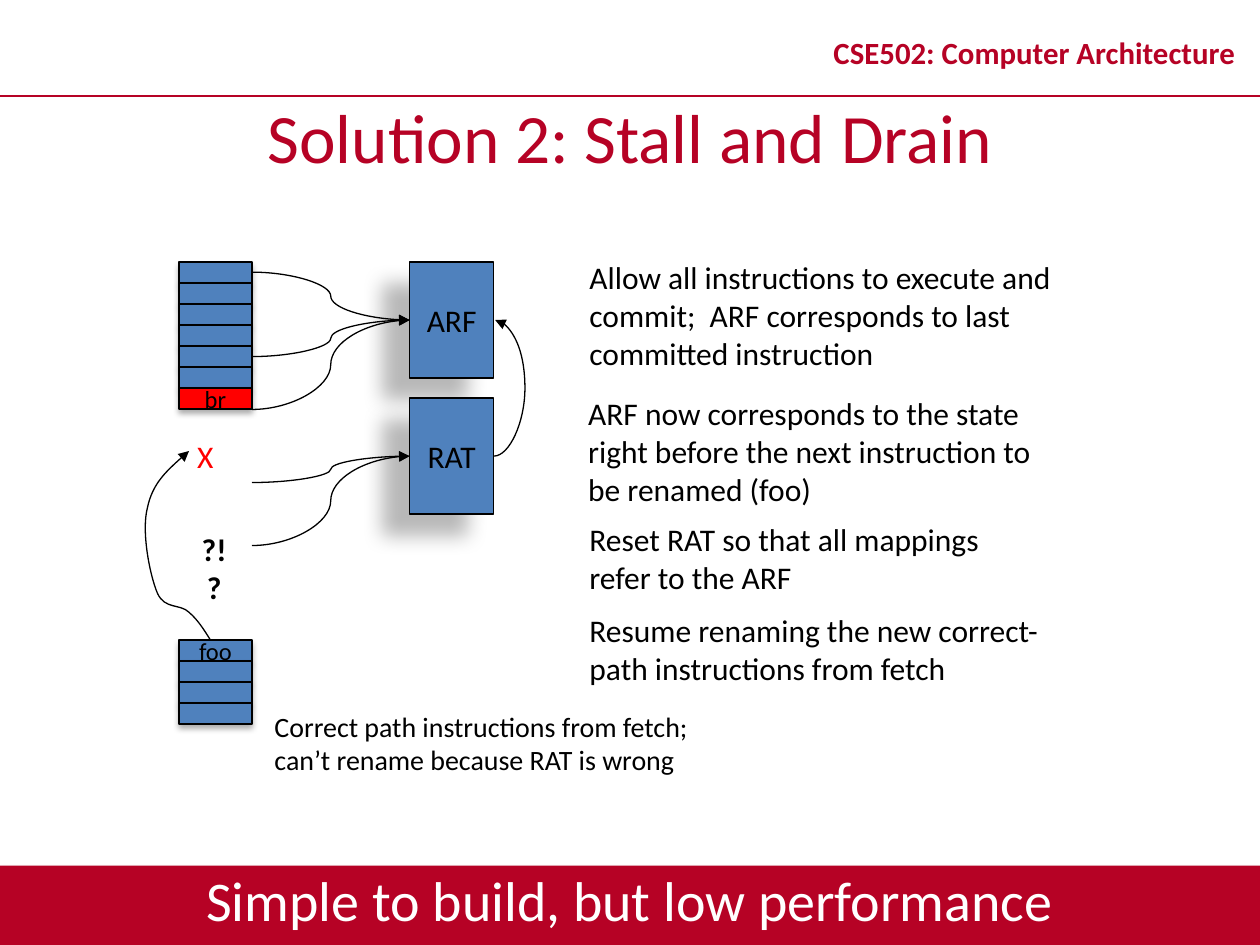
from lxml.etree import SubElement
from pptx import Presentation
from pptx.dml.color import RGBColor
from pptx.enum.shapes import MSO_CONNECTOR, MSO_SHAPE
from pptx.enum.text import MSO_ANCHOR, MSO_AUTO_SIZE, PP_ALIGN
from pptx.oxml.ns import qn
from pptx.util import Inches, Pt

CRIMSON, BLUE, RED, BLACK, WHITE = "B60225", "4F81BD", "FF0000", "000000", "FFFFFF"
BAR_SHADOW = {"alpha": 35, "blur": 3.1, "dist": 1.8, "angle": 90}
ROW_SHADOW = {"alpha": 32, "blur": 3.5, "dist": 2.2, "angle": 90}
BLOCK_SHADOW = {"alpha": 28, "blur": 11.8, "dist": 19.7, "angle": 141}


def color(value):
    return RGBColor.from_string(value)


def set_attributes(target, values):
    for name, value in values.items():
        setattr(target, name, value)


def write(shape, lines, size, ink=BLACK, bold=False, align=PP_ALIGN.LEFT, **frame_format):
    """Put one paragraph per line into the shape."""
    frame = shape.text_frame
    set_attributes(frame, {"word_wrap": False, **frame_format})
    for index, line in enumerate(lines):
        para = frame.add_paragraph() if index else frame.paragraphs[0]
        para.alignment = align
        span = para.add_run()
        span.text = line
        set_attributes(span.font, {"name": "Calibri", "size": Pt(size), "bold": bold})
        span.font.color.rgb = color(ink)


def add_text(page, box, lines, size, **text_format):
    shape = page.shapes.add_textbox(*map(Inches, box))
    write(shape, lines, size, **text_format)
    return shape


def add_box(shapes, box, fill, shadow, label="", size=18, outlined=True):
    shape = shapes.add_shape(MSO_SHAPE.RECTANGLE, *map(Inches, box))
    shape.fill.solid()
    shape.fill.fore_color.rgb = color(fill)
    if outlined:
        set_line(shape, BLACK, 0.75)
    else:
        shape.line.fill.background()
    add_shadow(shape, **shadow)
    if label:
        write(shape, [label], size, align=PP_ALIGN.CENTER, vertical_anchor=MSO_ANCHOR.MIDDLE)


def add_shadow(shape, alpha, blur, dist, angle):
    shape.shadow.inherit = False
    effects = shape._element.spPr.find(qn("a:effectLst"))
    outer = SubElement(effects, qn("a:outerShdw"), blurRad=str(Pt(blur)), dist=str(Pt(dist)),
                       dir=str(angle * 60000), algn="ctr", rotWithShape="0")
    tint = SubElement(outer, qn("a:srgbClr"), val=BLACK)
    SubElement(tint, qn("a:alpha"), val=str(alpha * 1000))


def set_line(shape, ink, width, arrow=False):
    shape.line.color.rgb = color(ink)
    shape.line.width = Pt(width)
    if arrow:
        SubElement(shape.line._get_or_add_ln(), qn("a:tailEnd"), type="triangle")


def add_link(page, start, end, kind=MSO_CONNECTOR.CURVE, ink=BLACK, width=0.75, arrow=True,
             bend=None):
    """Join two points; bend is the bulge of a curve as a share of its width."""
    link = page.shapes.add_connector(kind, *map(Inches, (*start, *end)))
    set_line(link, ink, width, arrow)
    properties = link._element.spPr
    SubElement(properties, qn("a:effectLst"))
    if bend:
        guides = properties.find(qn("a:prstGeom")).get_or_add_avLst()
        SubElement(guides, qn("a:gd"), name="adj1", fmla=f"val {bend * 100000}")


def add_curved_arrow(page, points):
    """Draw Bezier segments: a start, then two controls and an end for each."""
    start, *rest = [tuple(map(Inches, point)) for point in points]
    builder = page.shapes.build_freeform(*start)
    builder.add_line_segments(rest, close=False)
    curve = builder.convert_to_shape()
    curve.fill.background()
    set_line(curve, BLACK, 0.75, arrow=True)
    curve.shadow.inherit = False
    route = next(curve._element.iter(qn("a:path")))
    steps = route.findall(qn("a:lnTo"))
    for first in range(0, len(steps), 3):
        bezier = SubElement(route, qn("a:cubicBezTo"))
        for step in steps[first:first + 3]:
            bezier.append(step[0])
            route.remove(step)


def add_frame(page, width, height):
    """Course header, rule, title and closing bar."""
    rule, band = 0.76, 0.63
    add_box(page.shapes, (0, height - band, width, band), CRIMSON, BAR_SHADOW, outlined=False)
    add_link(page, (0, rule), (width, rule), MSO_CONNECTOR.STRAIGHT, CRIMSON, 1, arrow=False)
    middle = {"align": PP_ALIGN.CENTER, "vertical_anchor": MSO_ANCHOR.MIDDLE}
    header = add_text(page, (6.42, rule - band, 3.58, band), ["CSE502: Computer Architecture"],
                      17.6, ink=CRIMSON, bold=True, **middle)
    header.text_frame.paragraphs[0].line_spacing = 0.8
    title = page.shapes.title
    set_attributes(title, dict(zip(("left", "top", "width", "height"),
                                   map(Inches, (0, rule, width, band)))))
    write(title, ["Solution 2: Stall and Drain"], 39.6, ink=CRIMSON, word_wrap=True,
          auto_size=MSO_AUTO_SIZE.NONE, **middle)
    add_text(page, (0, 6.82, width, band), ["Simple to build, but low performance"], 32,
             ink=WHITE, align=PP_ALIGN.CENTER, word_wrap=True)


def add_queue(shapes, box, rows):
    """Stack equal instruction slots, each given as (label, fill)."""
    left, top, width, height = box
    slot = height / len(rows)
    for index, (label, fill) in enumerate(rows):
        add_box(shapes, (left, top + index * slot, width, slot), fill, ROW_SHADOW, label, 14)


def add_diagram(page, left, top):
    """Instruction queues on the left feed the register tables on the right."""
    queue_width, slot = 0.58, 1 / 6
    queue_right = left + queue_width
    fetch_top = top + 18 * slot
    add_queue(page.shapes, (left, top, queue_width, 7 * slot),
              [("", BLUE)] * 6 + [("br", RED)])
    add_queue(page.shapes.add_group_shape().shapes, (left, fetch_top, queue_width, 4 * slot),
              [("foo", BLUE)] + [("", BLUE)] * 3)

    table_left, table_width, table_height, table_step = 3.25, 0.67, 0.92, 1.08
    sources = {"ARF": (2.16, 2.83, 3.25), "RAT": (3.83, 4.33)}
    centers = []
    for index, (label, starts) in enumerate(sources.items()):
        table_top = top + index * table_step
        centers.append(table_top + table_height / 2)
        add_box(page.shapes, (table_left, table_top, table_width, table_height), BLUE,
                BLOCK_SHADOW, label)
        for start in starts:
            add_link(page, (queue_right, start), (table_left, centers[-1]))
    table_right = table_left + table_width
    add_link(page, (table_right, centers[1]), (table_right + 0.01, centers[0]), bend=25)

    add_curved_arrow(page, [(1.67, fetch_top), (1.62, 5), (1.57, 4.92), (1.5, 4.86),
                            (1.43, 4.79), (1.31, 4.84), (1.25, 4.71),
                            (1.19, 4.57), (1.12, 4.22), (1.17, 4.03),
                            (1.21, 3.84), (1.35, 3.71), (1.5, 3.58)])
    add_text(page, (1.44, 3.42, 0.38, 0.4), ["X"], 18, ink=RED, align=PP_ALIGN.CENTER)
    add_text(page, (1.47, 4.16, 0.46, 0.4), ["?!?"], 18, bold=True, align=PP_ALIGN.CENTER,
             word_wrap=True)
    add_text(page, (2.08, 5.58, 3.59, 0.64),
             ["Correct path instructions from fetch;", "can’t rename because RAT is wrong"], 16)


def add_steps(page):
    steps = [
        ((4.58, 2, 3.96, 1.01), ["Allow all instructions to execute and",
                                 "commit;  ARF corresponds to last",
                                 "committed instruction"]),
        ((4.57, 3.08, 3.8, 1.01), ["ARF now corresponds to the state",
                                   "right before the next instruction to",
                                   "be renamed (foo)"]),
        ((4.58, 4.08, 3.37, 0.71), ["Reset RAT so that all mappings", "refer to the ARF"]),
        ((4.58, 4.8, 3.82, 0.71), ["Resume renaming the new correct-",
                                   "path instructions from fetch"]),
    ]
    for box, lines in steps:
        add_text(page, box, lines, 18)


def main():
    width, height = 10, 7.5
    deck = Presentation()
    set_attributes(deck, {"slide_width": Inches(width), "slide_height": Inches(height)})
    page = deck.slides.add_slide(deck.slide_layouts[5])
    add_frame(page, width, height)
    add_diagram(page, 1.42, 2.08)
    add_steps(page)
    deck.save("out.pptx")


if __name__ == "__main__":
    main()
